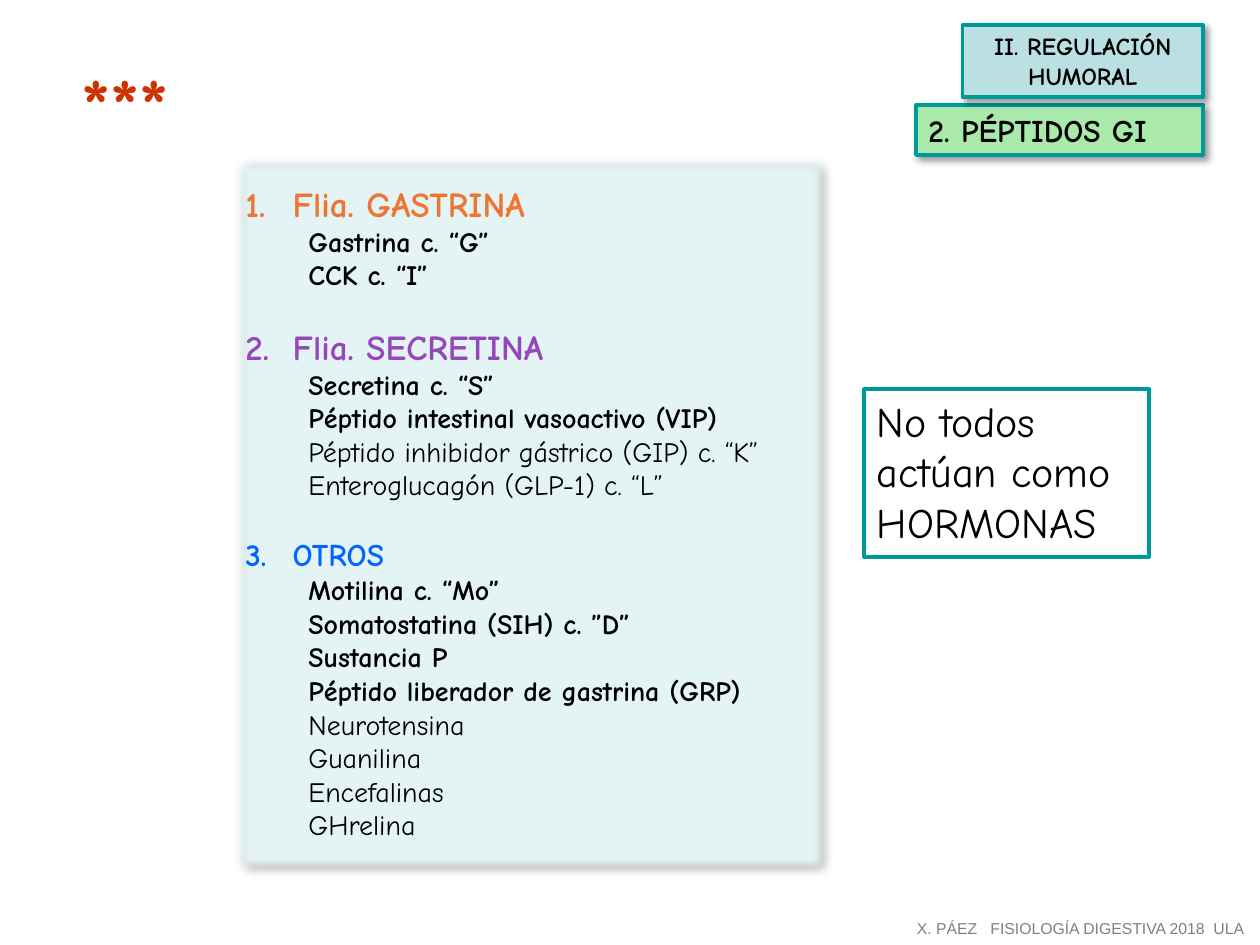
from dataclasses import dataclass
from lxml.etree import SubElement as Sub
from pptx import Presentation
from pptx.dml.color import RGBColor as RGB
from pptx.enum.shapes import MSO_SHAPE as Shape
from pptx.enum.text import MSO_ANCHOR as Anchor, PP_ALIGN as Align
from pptx.oxml.ns import qn
from pptx.util import Pt


@dataclass(frozen=True)
class Theme:
    """Fonts, type sizes and colours of the slide."""
    font: str = "Comic Neue"
    plain: str = "Arial"
    black: str = "000000"
    grey: str = "808080"
    red: str = "CC3300"
    teal: str = "009999"
    aqua: str = "BBE0E3"
    green: str = "A9E9A9"
    pale: str = "E4F3F4"
    orange: str = "EE7532"
    purple: str = "9548B8"
    blue: str = "0066FF"
    stars: float = 44
    note: float = 24
    family: float = 20
    topic: float = 18
    item: float = 16
    unit: float = 14
    foot: float = 9


T = Theme()
FAMILIES = [
    ("Flia. GASTRINA", T.family, T.orange,
     ["Gastrina c. “G”", "CCK c. “I”"], []),
    ("Flia. SECRETINA", T.family, T.purple,
     ["Secretina c. “S”", "Péptido intestinal vasoactivo (VIP)"],
     ["Péptido inhibidor gástrico (GIP) c. “K”", "Enteroglucagón (GLP-1) c. “L”"]),
    ("OTROS", T.topic, T.blue,
     ["Motilina c. “Mo”", "Somatostatina (SIH) c. ”D”", "Sustancia P",
      "Péptido liberador de gastrina (GRP)"],
     ["Neurotensina", "Guanilina", "Encefalinas", "GHrelina"]),
]


def cast(effects):
    """Add a soft drop shadow to an effect list."""
    drop = Sub(effects, qn("a:outerShdw"), blurRad=str(Pt(4)), dist=str(Pt(3)),
               dir="2700000", algn="tl", rotWithShape="0")
    tint = Sub(drop, qn("a:srgbClr"), val=T.black)
    Sub(tint, qn("a:alpha"), val="40000")


def frame(slide, box, fill=None, shade=False, soft=0):
    """Draw a teal-edged rectangle ready for top-left text."""
    rect = slide.shapes.add_shape(Shape.RECTANGLE, *map(Pt, box))
    rect.shadow.inherit = False
    rect.line.color.rgb = RGB.from_string(T.teal)
    rect.line.width = Pt(2.25)
    if fill:
        rect.fill.solid()
        rect.fill.fore_color.rgb = RGB.from_string(fill)
    else:
        rect.fill.background()
    effects = rect._element.spPr.find(qn("a:effectLst"))
    if shade:
        cast(effects)
    if soft:
        Sub(effects, qn("a:softEdge"), rad=str(Pt(soft)))
    text = rect.text_frame
    text.word_wrap = True
    text.vertical_anchor = Anchor.TOP
    return text


def write(text, words, size, color=T.black, bold=False, align=Align.LEFT, font=T.font):
    """Append one paragraph holding one run, and return the paragraph."""
    first = text.paragraphs[0]
    para = text.add_paragraph() if first.runs else first
    para.alignment = align
    run = para.add_run()
    run.text = words
    run.font.name = font
    run.font.size = Pt(size)
    run.font.bold = bold
    run.font.color.rgb = RGB.from_string(color)
    return para


def indent(para, left, hang=0):
    """Set the left margin and first-line indent, and return the properties."""
    props = para._p.get_or_add_pPr()
    props.set("marL", str(Pt(left)))
    props.set("indent", str(Pt(hang)))
    return props


def panel(slide, box):
    """Place the numbered list of peptide families."""
    text = frame(slide, box, T.pale, shade=True, soft=5)
    text.margin_top = Pt(15.6)
    for count, (name, size, color, strong, light) in enumerate(FAMILIES, 1):
        head = write(text, name, size, color, True)
        if count > 1:
            head.space_before = Pt(19.2)
        Sub(indent(head, 27, -27), qn("a:buAutoNum"),
            type="arabicPeriod", startAt=str(count))
        for item in strong + light:
            indent(write(text, item, T.item, bold=item in strong), 36)


def note(slide, box):
    """Place the remark beside the list."""
    text = frame(slide, box)
    for line in ("No todos", "actúan como", "HORMONAS"):
        write(text, line, T.note)


def label(slide, box):
    """Place the unit and topic tags, lined up on the right edge."""
    left, top, width, height = box
    topic = frame(slide, (left, top + height - 28.8, width, 28.8), T.green, True)
    write(topic, "2. PÉPTIDOS GI", T.topic, bold=True)
    unit = frame(slide, (left + width - 137.5, top, 137.5, 41), T.aqua, True)
    for line in ("II. REGULACIÓN", "HUMORAL"):
        write(unit, line, T.unit, bold=True, align=Align.CENTER)


def stars(slide, box):
    """Place the three shadowed asterisks."""
    text = slide.shapes.add_textbox(*map(Pt, box)).text_frame
    text.word_wrap = True
    run = write(text, "***", T.stars, T.red, True, Align.CENTER).runs[0]
    effects = run._r.get_or_add_rPr().makeelement(qn("a:effectLst"), {})
    cast(effects)
    run._r.rPr.find(qn("a:solidFill")).addnext(effects)


def footer(slide, box):
    """Place the course credit line."""
    text = slide.shapes.add_textbox(*map(Pt, box)).text_frame
    text.word_wrap = False
    write(text, "X. PÁEZ   FISIOLOGÍA DIGESTIVA 2018  ULA", T.foot, T.grey,
          align=Align.CENTER, font=T.plain)


def main():
    """Build the slide and save it."""
    deck = Presentation()
    deck.slide_width, deck.slide_height = Pt(720), Pt(540)
    slide = deck.slides.add_slide(deck.slide_layouts[6])
    panel(slide, (133.2, 88.6, 341.3, 411))
    note(slide, (494, 222.5, 162.7, 95.8))
    stars(slide, (29.5, 28.8, 84.2, 59.8))
    label(slide, (523.5, 14.4, 164, 74.2))
    footer(slide, (514.8, 521.3, 205.2, 18))
    deck.save("out.pptx")


if __name__ == "__main__":
    main()
